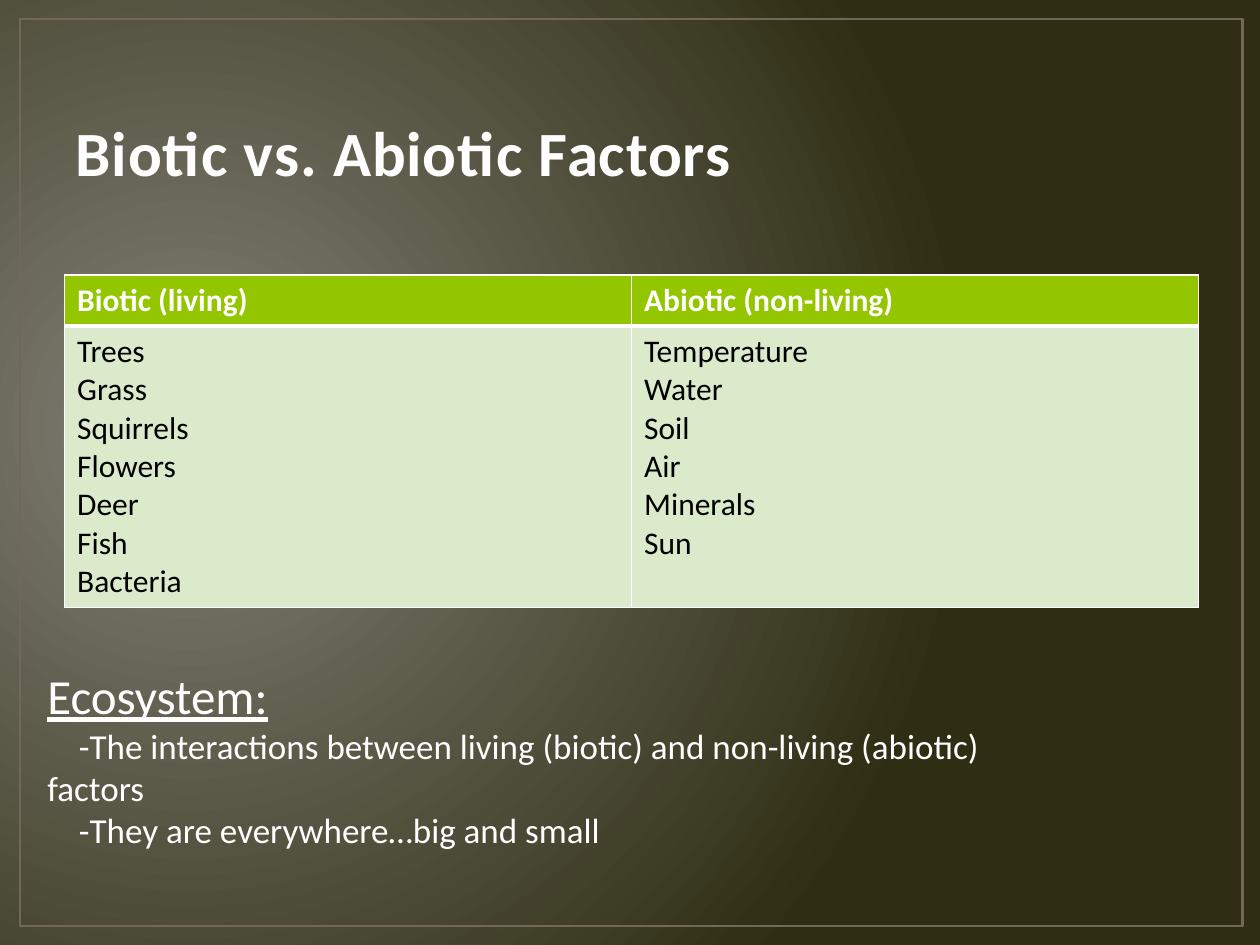
"""Build the slide on biotic and abiotic factors."""
from dataclasses import dataclass

import pptx
import pptx.dml.color
import pptx.enum.shapes
import pptx.enum.text
import pptx.oxml
import pptx.oxml.ns
import pptx.util
from lxml import etree

Pt = pptx.util.Pt
WHITE = "FFFFFF"
BORDER_SIDES = ("lnL", "lnR", "lnT", "lnB")


@dataclass
class Factor:
    heading: str
    examples: list[str]


@dataclass
class Line:
    text: str
    size: float
    underline: bool = False
    indent: float = 0


FACTORS = [
    Factor("Biotic (living)",
           ["Trees", "Grass", "Squirrels", "Flowers", "Deer", "Fish", "Bacteria"]),
    Factor("Abiotic (non-living)",
           ["Temperature", "Water", "Soil", "Air", "Minerals", "Sun"]),
]
ECOSYSTEM = [
    Line("Ecosystem:", 28, underline=True),
    Line("-The interactions between living (biotic) and non-living (abiotic) factors",
         20, indent=18),
    Line("-They are everywhere…big and small", 20, indent=18),
]


def rgb(color: str) -> pptx.dml.color.RGBColor:
    return pptx.dml.color.RGBColor.from_string(color)


def add_run(paragraph, text: str, color: str, **font_format):
    run = paragraph.add_run()
    run.text = text
    run.font.color.rgb = rgb(color)
    for attribute, value in {"name": "Calibri", **font_format}.items():
        setattr(run.font, attribute, value)
    return run


def paint_background(slide) -> None:
    fill = slide.background.fill
    fill.gradient()
    for stop, color, position in zip(fill.gradient_stops, ("818076", "2F2E14"), (0, 1)):
        stop.color.rgb = rgb(color)
        stop.position = position
    linear = slide._element.find(".//" + pptx.oxml.ns.qn("a:lin"))
    circle = pptx.oxml.parse_xml(
        f'<a:path {pptx.oxml.ns.nsdecls("a")} path="circle">'
        '<a:fillToRect l="15000" t="50000" r="85000" b="60000"/></a:path>')
    linear.getparent().replace(linear, circle)


def add_frame(slide) -> None:
    frame = slide.shapes.add_shape(
        pptx.enum.shapes.MSO_SHAPE.RECTANGLE, Pt(11.5), Pt(10.8), Pt(698.4), Pt(518.4))
    frame.shadow.inherit = False
    frame.fill.background()
    frame.line.color.rgb = rgb("71685A")
    frame.line.width = Pt(1.5)


def format_title(title) -> None:
    placement = {"left": Pt(36), "top": Pt(21.6), "width": Pt(648), "height": Pt(90)}
    for attribute, value in placement.items():
        setattr(title, attribute, value)
    title.text_frame.vertical_anchor = pptx.enum.text.MSO_ANCHOR.BOTTOM
    paragraph = title.text_frame.paragraphs[0]
    paragraph.alignment = pptx.enum.text.PP_ALIGN.LEFT
    run = add_run(paragraph, "Biotic vs. Abiotic Factors", "FFFEFE", size=Pt(36), bold=True)
    run.font._element.set("spc", "50")


def set_borders(cell, widths: dict[str, float]) -> None:
    properties = cell._tc.get_or_add_tcPr()
    for position, side in enumerate(BORDER_SIDES):
        border = etree.Element(pptx.oxml.ns.qn(f"a:{side}"), w=str(Pt(widths.get(side, 1))))
        solid = etree.SubElement(border, pptx.oxml.ns.qn("a:solidFill"))
        etree.SubElement(solid, pptx.oxml.ns.qn("a:srgbClr"), val=WHITE)
        properties.insert(position, border)


def fill_cell(cell, lines: list[str], fill: str, color: str, bold: bool,
              widths: dict[str, float]) -> None:
    cell.fill.solid()
    cell.fill.fore_color.rgb = rgb(fill)
    frame = cell.text_frame
    for index, text in enumerate(lines):
        paragraph = frame.add_paragraph() if index else frame.paragraphs[0]
        add_run(paragraph, text, color, size=Pt(18), bold=bold)
    set_borders(cell, widths)


def add_factor_table(slide, factors: list[Factor]) -> None:
    comparison = slide.shapes.add_table(
        2, len(factors), Pt(36.9), Pt(157), Pt(648), Pt(189.6)).table
    comparison.rows[0].height = Pt(29.2)
    comparison.rows[1].height = Pt(160.4)
    for column, factor in enumerate(factors):
        fill_cell(comparison.cell(0, column), [factor.heading], "94C600", WHITE, True,
                  {"lnB": 3})
        fill_cell(comparison.cell(1, column), factor.examples, "DCEACC", "000000", False,
                  {"lnT": 3})


def add_definition(slide, lines: list[Line]) -> None:
    frame = slide.shapes.add_textbox(Pt(20), Pt(376.6), Pt(597.6), Pt(115)).text_frame
    frame.word_wrap = True
    for index, line in enumerate(lines):
        paragraph = frame.add_paragraph() if index else frame.paragraphs[0]
        paragraph._p.get_or_add_pPr().set("indent", str(Pt(line.indent)))
        add_run(paragraph, line.text, WHITE, size=Pt(line.size), underline=line.underline)


def main() -> None:
    presentation = pptx.Presentation()
    presentation.slide_width = Pt(720)
    presentation.slide_height = Pt(540)
    slide = presentation.slides.add_slide(presentation.slide_layouts[5])
    paint_background(slide)
    add_frame(slide)
    format_title(slide.shapes.title)
    add_factor_table(slide, FACTORS)
    add_definition(slide, ECOSYSTEM)
    presentation.save("out.pptx")


if __name__ == "__main__":
    main()
